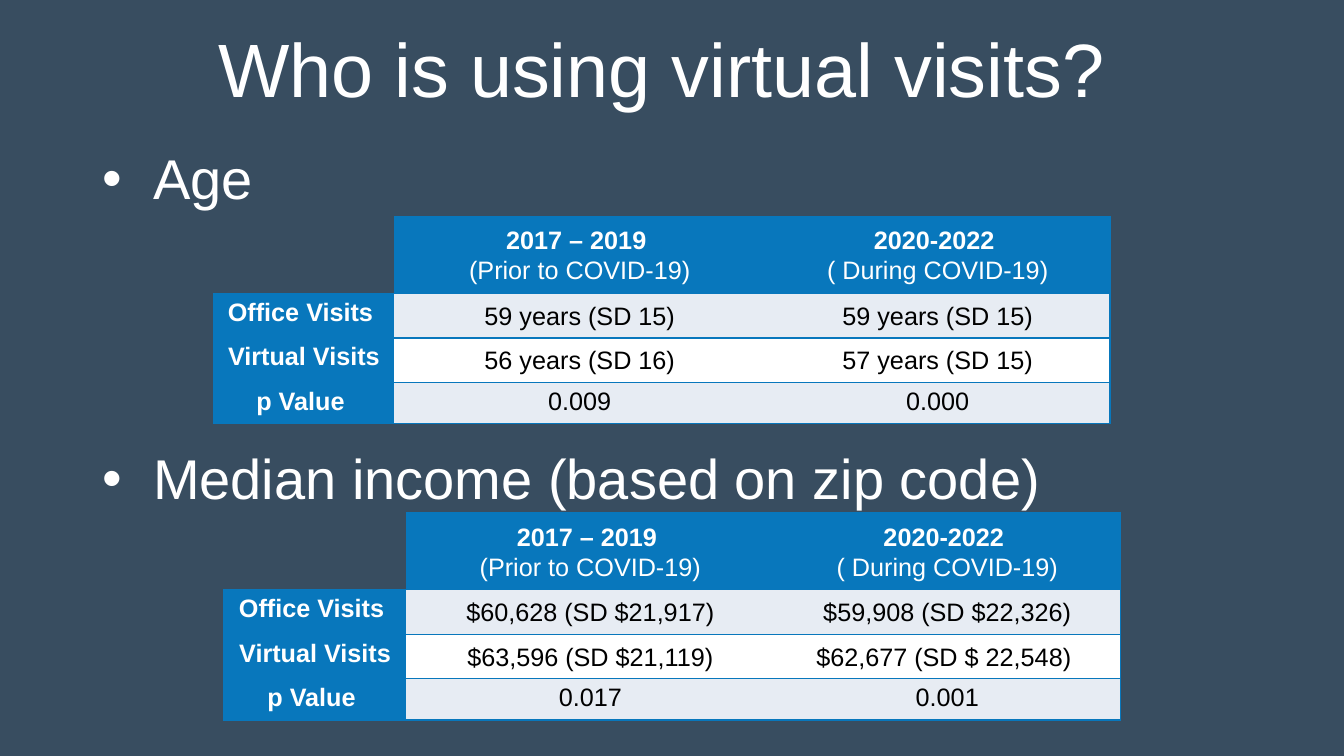
from dataclasses import dataclass

from lxml.etree import SubElement as Sub
from pptx import Presentation
from pptx.dml.color import RGBColor as Rgb
from pptx.enum.text import MSO_ANCHOR as Anchor, PP_ALIGN as Align
from pptx.oxml.ns import qn
from pptx.util import Inches, Pt


@dataclass(frozen=True)
class Theme:
    back: str = "384D60"
    blue: str = "0877BC"
    pale: str = "E7ECF3"
    white: str = "FFFFFF"
    black: str = "000000"
    font: str = "Arial"
    title: int = 54
    body: int = 40
    cell: int = 18


class Deck:
    def __init__(self, theme):
        self.theme = theme
        self.file = Presentation()
        self.file.slide_width = Inches(13.33)
        self.file.slide_height = Inches(7.5)
        self.slide = self.file.slides.add_slide(self.file.slide_layouts[6])
        fill = self.slide.background.fill
        fill.solid()
        fill.fore_color.rgb = Rgb.from_string(theme.back)

    def style(self, para, size, color, bold=False):
        for run in para.runs:
            font = run.font
            font.name, font.size, font.bold = self.theme.font, Pt(size), bold
            font.color.rgb = Rgb.from_string(color)

    def box(self, place, text, size):
        frame = self.slide.shapes.add_textbox(*map(Inches, place)).text_frame
        frame.word_wrap = True
        frame.text = text
        for para in frame.paragraphs:
            para.line_spacing = 0.9
            self.style(para, size, self.theme.white)
        return frame

    def title(self, place, text):
        frame = self.box(place, text, self.theme.title)
        frame.vertical_anchor = Anchor.MIDDLE
        frame.paragraphs[0].alignment = Align.CENTER

    def bullets(self, place, items, gap):
        frame = self.box(place, "\n".join(items), self.theme.body)
        for i, para in enumerate(frame.paragraphs):
            if i:
                para.space_before = Pt(gap)
            props = para._p.get_or_add_pPr()
            props.set("marL", str(Inches(0.5)))
            props.set("indent", str(-Inches(0.5)))
            Sub(props, qn("a:buFont"), typeface=self.theme.font)
            Sub(props, qn("a:buChar"), char="•")

    def edges(self, cell, shown):
        """Draw the sides named in shown (of L, R, T, B) and clear the rest."""
        props = cell._tc.get_or_add_tcPr()
        for side in "LRTB":
            line = Sub(props, qn(f"a:ln{side}"), w=str(Pt(1)))
            if side in shown:
                fill = Sub(line, qn("a:solidFill"))
                Sub(fill, qn("a:srgbClr"), val=self.theme.blue)
            else:
                Sub(line, qn("a:noFill"))

    def cell(self, cell, text, row, col):
        theme = self.theme
        if row == col == 0:
            self.edges(cell, "")
            cell.fill.background()
            return
        self.edges(cell, "TB" + {0: "L", 2: "R"}.get(col, ""))
        head = row == 0 or col == 0
        cell.fill.solid()
        shade = theme.blue if head else theme.pale if row % 2 else theme.white
        cell.fill.fore_color.rgb = Rgb.from_string(shade)
        data = col > 0 and row < 3
        if data:
            cell.vertical_anchor = Anchor.MIDDLE
            cell.margin_left = cell.margin_right = Inches(0.06)
            cell.margin_top = cell.margin_bottom = Inches(0.06)
        cell.text_frame.text = text
        for i, para in enumerate(cell.text_frame.paragraphs):
            para.alignment = Align.CENTER
            if data:
                para.line_spacing = 1.07
            color = theme.white if head else theme.black
            self.style(para, theme.cell, color, head and i == 0)

    def table(self, left, top, wide, rows):
        high = [0.72] + [0.41] * (len(rows) - 1)
        place = map(Inches, (left, top, sum(wide), sum(high)))
        table = self.slide.shapes.add_table(len(rows), len(wide), *place).table
        table.first_row = table.horz_banding = False
        for col, size in zip(table.columns, wide):
            col.width = Inches(size)
        for row, size in zip(table.rows, high):
            row.height = Inches(size)
        for r, row in enumerate(rows):
            for c, text in enumerate(row):
                self.cell(table.cell(r, c), text, r, c)


HEAD = ("", "2017 – 2019 \n(Prior to COVID-19)", "2020-2022 \n( During COVID-19)")
LABELS = ("Office Visits ", "Virtual Visits", "p Value ")
AGES = (("59 years (SD 15)", "59 years (SD 15)"),
        ("56 years (SD 16)", "57 years (SD 15)"),
        ("0.009", "0.000"))
INCOMES = (("$60,628 (SD $21,917)", "$59,908 (SD $22,326)"),
           ("$63,596 (SD $21,119)", "$62,677 (SD $ 22,548) "),
           ("0.017", "0.001"))


def grid(data):
    return [HEAD] + [(label, *pair) for label, pair in zip(LABELS, data)]


def main():
    deck = Deck(Theme())
    deck.title((0, 0, 13.33, 1.45), "Who is using virtual visits? ")
    deck.bullets((0.92, 1.45, 11.5, 5.31),
                 ("Age", "Median income (based on zip code)"), 171)
    deck.table(2.12, 2.15, (1.79, 3.68, 3.42), grid(AGES))
    deck.table(2.22, 5.09, (1.81, 3.65, 3.43), grid(INCOMES))
    deck.file.save("out.pptx")


if __name__ == "__main__":
    main()
